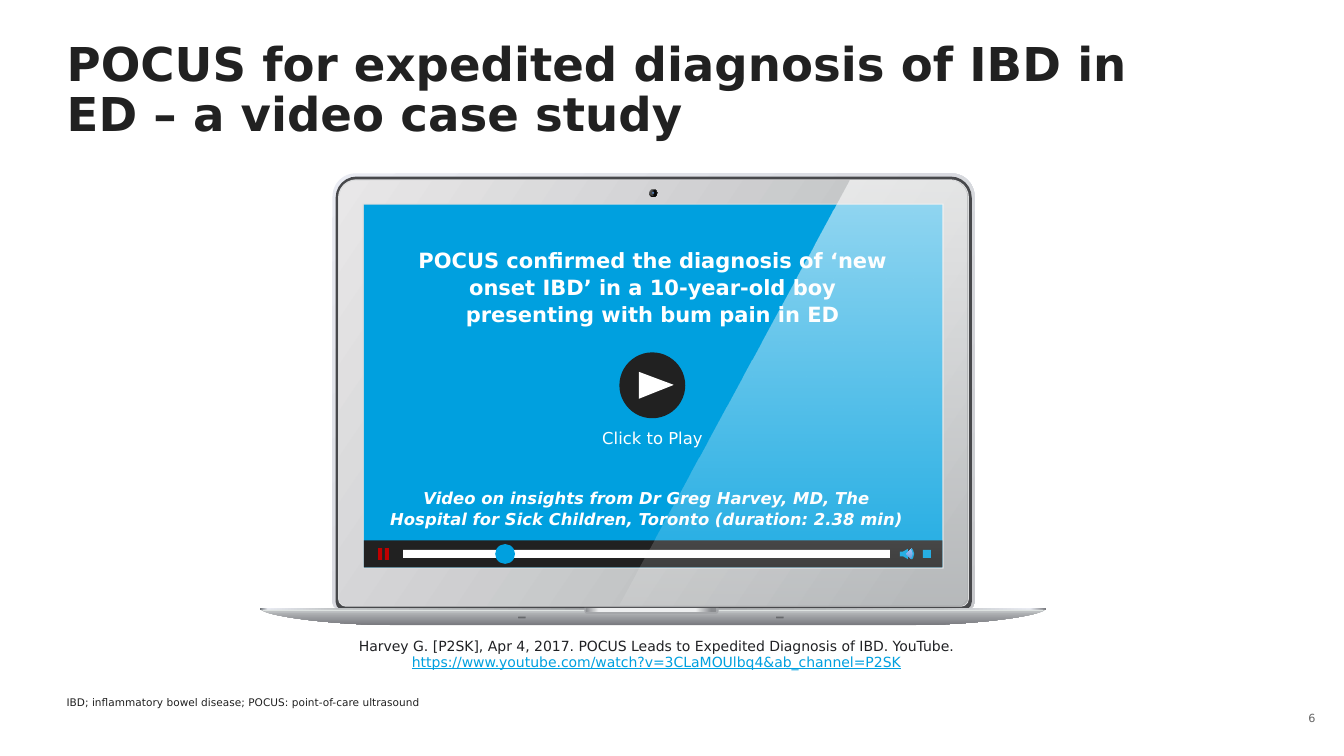
"""Build a slide showing a video case study on a laptop screen."""
from dataclasses import dataclass

from pptx import Presentation
from pptx.dml.color import RGBColor
from pptx.enum.shapes import MSO_SHAPE as SHAPE
from pptx.enum.text import MSO_ANCHOR as ANCHOR, PP_ALIGN as ALIGN
from pptx.oxml import parse_xml
from pptx.oxml.ns import nsdecls, qn
from pptx.util import Cm, Pt


@dataclass(frozen=True)
class Theme:
    """Colours, font and type sizes."""
    font: str = "DejaVu Sans"
    ink: str = "212121"
    cite: str = "202124"
    grey: str = "646464"
    blue: str = "00A0DF"
    white: str = "FFFFFF"
    red: str = "C00000"
    bezel: str = "47484B"
    rim: str = "DCDDDE"
    silver: str = "BEC1C3"
    title: float = 33.3
    heading: float = 15
    caption: float = 11.7
    source: float = 10
    number: float = 8
    note: float = 7.5


T = Theme()
TITLE = "POCUS for expedited diagnosis of IBD in ED – a video case study"
TITLE_BOX = (1.68, 1.04, 28.45, 2.57)

HEADING = "POCUS confirmed the diagnosis of ‘new onset IBD’ in a 10-year-old boy presenting with bum pain in ED"
CREDIT = "Video on insights from Dr Greg Harvey, MD, The Hospital for Sick Children, Toronto (duration: 2.38 min)"
SCREEN_TEXTS = [
    ((10.29, 6.07, 12.32, 2.26), HEADING, dict(size=T.heading, bold=True)),
    ((9.5, 12.14, 13.59, 1.27), CREDIT, dict(size=T.caption, bold=True, italic=True)),
    ((9.65, 10.64, 13.59, 0.74), "Click to Play", dict(size=T.caption)),
]
CITATION = [
    ("Harvey G. [P2SK], Apr 4, 2017. POCUS Leads to Expedited Diagnosis of IBD. YouTube. ",
     dict(size=T.source, color=T.cite)),
    ("https://www.youtube.com/watch?v=3CLaMOUlbq4&ab_channel=P2SK",
     dict(size=T.source, color=T.blue, underline=True)),
]
NOTE = "IBD; inflammatory bowel disease; POCUS: point-of-care ultrasound"

LID_FILL = (55, [(0, "E9EBF2"), (100, "C7C8CB")])
FACE_FILL = (34, [(0, "E8E7E8"), (95, "AFB2B4")])
BASE_FILL = (90, [(0, T.silver), (100, "78797E")])
EDGE_FILL = (0, [(0, "64696E"), (1, "E9EBF2"), (10, T.silver), (46, "96989B"),
                 (86, T.silver), (98, "E9EBF2"), (100, "78797E")])
NOTCH_FILL = (0, [(0, "8B8D90"), (10, "EDEEEF"), (84, "EDEEEF"), (96, "8B8D90")])
GLOSS_FILL = (90, [(0, T.white, 60), (100, T.white, 10)])

LID = [
    ((8.38, 4.37, 16.18, 11), LID_FILL, 0.58, 0.2),
    ((8.46, 4.45, 16.03, 10.92), T.bezel, 0.53, 0.2),
    ((8.52, 4.52, 15.9, 10.77), T.rim, 0.46, 0.2),
    ((8.55, 4.55, 15.84, 10.71), FACE_FILL, 0.44, 0.18),
]
CAMERA = [(0.2, (54, [(27, "696969"), (73, "0C0C0C")])),
          (0.15, (0, [(32, "494949"), (69, "050505")])), (0.05, "557DB1")]
CAMERA_AT = (16.46, 4.86)
SCREEN = (9.17, 5.16, 14.58, 9.14)
BAR_H = 0.68
PLAY_AT, PLAY_D = (16.44, 9.71), 1.66
PLAY_ARROW = [(16.1, 9.37), (16.1, 10.05), (16.98, 9.7)]
BAR_MID = 13.96
CONTROLS = [(9.53, 0.1, 0.3, T.red), (9.7, 0.1, 0.3, T.red),
            (10.16, 12.27, 0.2, T.white), (23.26, 0.2, 0.2, T.blue)]
KNOB_X, KNOB_D = 12.73, 0.5
SPEAKER = [(22.68, -0.06), (22.76, -0.06), (22.88, -0.13),
           (22.88, 0.13), (22.76, 0.06), (22.68, 0.06)]
WAVE_X, WAVES = 22.84, (0.1, 0.18)
FEET_X = (13.06, 19.56)


def rgb(code):
    return RGBColor.from_string(code)


def paint(sp, fill):
    """Give a shape a flat or gradient fill, no line and no shadow."""
    sp.shadow.inherit = False
    sp.line.fill.background()
    if isinstance(fill, str):
        sp.fill.solid()
        sp.fill.fore_color.rgb = rgb(fill)
        return
    angle, stops = fill
    gs = "".join(
        f'<a:gs pos="{pos * 1000}"><a:srgbClr val="{color}">'
        + "".join(f'<a:alpha val="{a * 1000}"/>' for a in alpha) + "</a:srgbClr></a:gs>"
        for pos, color, *alpha in stops)
    sp.fill.background()
    spPr = sp._element.spPr
    spPr.replace(spPr.find(qn("a:noFill")), parse_xml(
        f'<a:gradFill {nsdecls("a")} rotWithShape="1"><a:gsLst>{gs}</a:gsLst>'
        f'<a:lin ang="{angle * 60000}" scaled="0"/></a:gradFill>'))


def add_preset(shapes, kind, box, fill):
    sp = shapes.add_shape(kind, *map(Cm, box))
    paint(sp, fill)
    return sp


def add_disc(shapes, center, d, fill):
    x, y = center
    add_preset(shapes, SHAPE.OVAL, (x - d / 2, y - d / 2, d, d), fill)


def add_rounded(shapes, box, fill, top, bottom):
    sp = add_preset(shapes, SHAPE.ROUND_2_SAME_RECTANGLE, box, fill)
    for i, radius in enumerate((top, bottom)):
        sp.adjustments[i] = radius / min(box[2:])


def add_outline(shapes, points, fill):
    pts = [(Cm(x), Cm(y)) for x, y in points]
    fb = shapes.build_freeform(*pts[0], scale=1.0)
    fb.add_line_segments(pts[1:], close=True)
    paint(fb.convert_to_shape(), fill)


def curve(*ctrl, steps=16):
    """Sample a cubic curve through its four control points."""
    ts = [i / steps for i in range(steps + 1)]
    return [tuple((1 - t) ** 3 * a + 3 * t * (1 - t) ** 2 * b + 3 * t * t * (1 - t) * c + t ** 3 * d
                  for a, b, c, d in zip(*ctrl)) for t in ts]


def add_run(p, text, size, color=T.white, bold=False, italic=False, underline=False):
    r = p.add_run()
    r.text = text
    f = r.font
    f.name, f.size, f.color.rgb = T.font, Pt(size), rgb(color)
    f.bold, f.italic, f.underline = bold, italic, underline


def add_text(shapes, box, runs, align=ALIGN.CENTER, anchor=ANCHOR.TOP, spacing=1.0):
    tf = shapes.add_textbox(*map(Cm, box)).text_frame
    tf.word_wrap, tf.vertical_anchor = True, anchor
    p = tf.paragraphs[0]
    p.alignment, p.line_spacing = align, spacing
    for text, style in runs:
        add_run(p, text, **style)
    return tf


def no_margins(tf):
    tf.margin_left = tf.margin_top = tf.margin_right = tf.margin_bottom = 0


def add_base(shapes):
    right = curve((23.09, 15.75), (24.28, 15.75), (26.04, 15.57), (26.34, 15.37))
    mirror = [(32.92 - x, y) for x, y in reversed(right)]
    add_outline(shapes, right + mirror, BASE_FILL)
    add_preset(shapes, SHAPE.RECTANGLE, (6.55, 15.32, 19.81, 0.05), EDGE_FILL)
    add_outline(shapes, [(6.58, 15.37), (26.34, 15.37), (26.19, 15.44), (6.76, 15.44)], T.silver)
    add_preset(shapes, SHAPE.RECTANGLE, (6.63, 15.37, 19.66, 0.02), "EFF5F1")
    add_rounded(shapes, (14.73, 15.32, 3.38, 0.15), "A4A6A9", 0, 0.07)
    add_rounded(shapes, (14.76, 15.32, 3.3, 0.1), NOTCH_FILL, 0, 0.05)
    for x in FEET_X:
        add_preset(shapes, SHAPE.ROUNDED_RECTANGLE, (x, 15.54, 0.19, 0.04), "67696C")


def add_player(shapes):
    x, y, w, h = SCREEN
    add_preset(shapes, SHAPE.RECTANGLE, (x - 0.03, y - 0.03, w + 0.06, h + 0.06), T.rim)
    add_preset(shapes, SHAPE.RECTANGLE, SCREEN, T.blue)
    add_disc(shapes, PLAY_AT, PLAY_D, T.ink)
    add_outline(shapes, PLAY_ARROW, T.white)
    add_preset(shapes, SHAPE.RECTANGLE, (x, y + h - BAR_H, w, BAR_H), T.ink)
    for cx, cw, ch, color in CONTROLS:
        add_preset(shapes, SHAPE.RECTANGLE, (cx, BAR_MID - ch / 2, cw, ch), color)
    add_disc(shapes, (KNOB_X, BAR_MID), KNOB_D, T.blue)
    add_outline(shapes, [(px, BAR_MID + dy) for px, dy in SPEAKER], T.blue)
    for r in WAVES:
        sp = shapes.add_shape(SHAPE.ARC, *map(Cm, (WAVE_X - r, BAR_MID - r, 2 * r, 2 * r)))
        sp.shadow.inherit = False
        sp.adjustments[0], sp.adjustments[1] = 189, 27
        sp.line.color.rgb, sp.line.width = rgb(T.blue), Pt(1)
    for box, text, style in SCREEN_TEXTS:
        add_text(shapes, box, [(text, style)], spacing=1.07)


def add_laptop(shapes):
    for layer in LID:
        add_rounded(shapes, *layer)
    for d, fill in CAMERA:
        add_disc(shapes, CAMERA_AT, d, fill)
    add_base(shapes)
    add_player(shapes)
    corner = curve((23.95, 4.55), (24.18, 4.55), (24.36, 4.75), (24.36, 4.98))
    add_outline(shapes, [(21.41, 4.55), *corner, (24.36, 15.09), (24.21, 15.24), (15.62, 15.24)], GLOSS_FILL)


def main():
    prs = Presentation()
    prs.slide_width, prs.slide_height = Cm(33.87), Cm(19.05)
    s = prs.slides.add_slide(prs.slide_layouts[5])

    title = s.shapes.title
    title.left, title.top, title.width, title.height = map(Cm, TITLE_BOX)
    tf = title.text_frame
    tf.word_wrap, tf.vertical_anchor = True, ANCHOR.TOP
    no_margins(tf)
    p = tf.paragraphs[0]
    p.alignment, p.line_spacing = ALIGN.LEFT, 0.9
    add_run(p, TITLE, T.title, T.ink, bold=True)

    add_text(s.shapes, (32.33, 17.65, 1.07, 0.91), [("6", dict(size=T.number, color=T.grey))],
             ALIGN.RIGHT, ANCHOR.MIDDLE)
    no_margins(add_text(s.shapes, (1.68, 17.45, 23.29, 0.4), [(NOTE, dict(size=T.note, color=T.ink))],
                        ALIGN.LEFT, ANCHOR.BOTTOM))
    add_text(s.shapes, (6.43, 15.93, 20.22, 1.12), CITATION)
    add_laptop(s.shapes.add_group_shape().shapes)
    prs.save("out.pptx")


if __name__ == "__main__":
    main()
